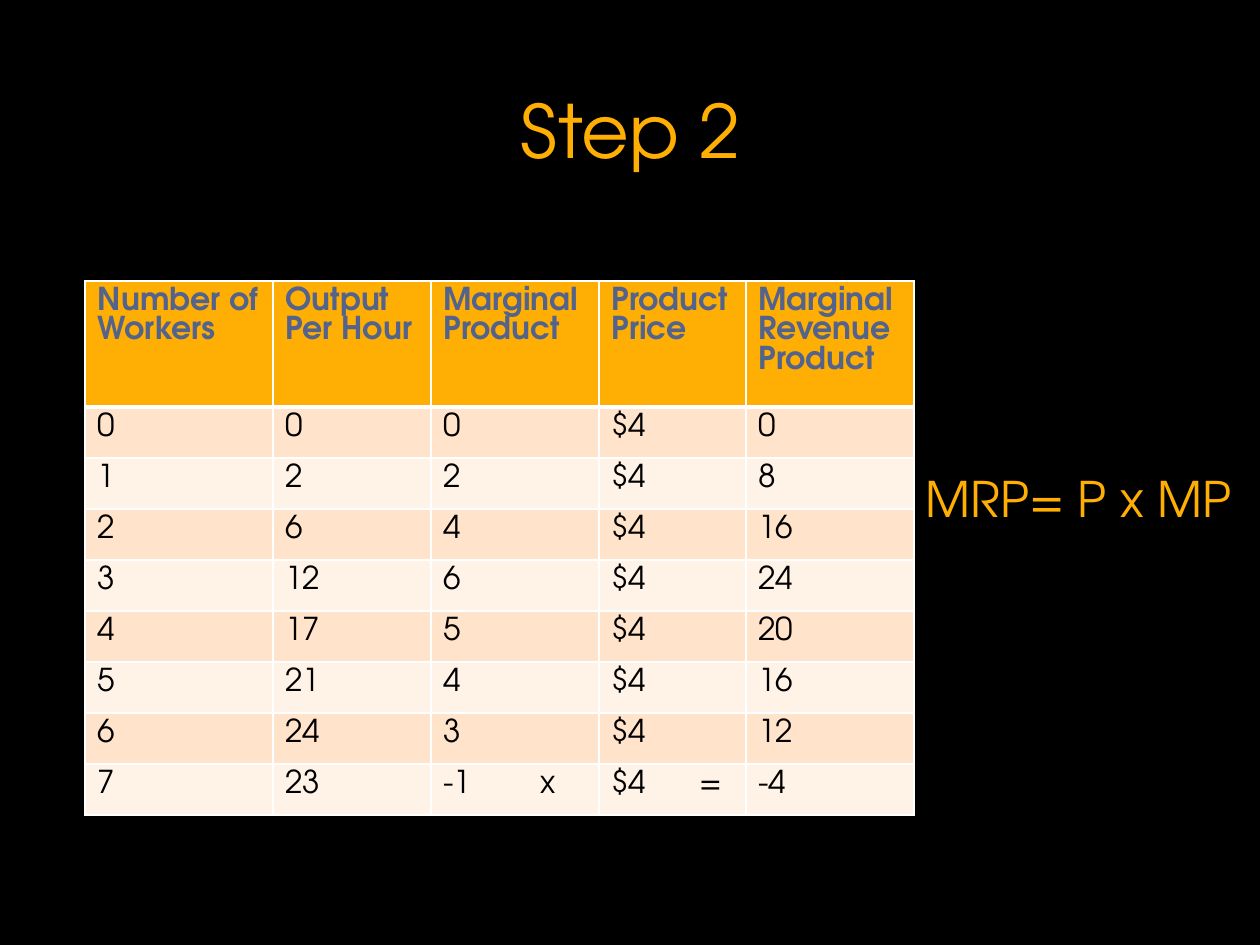
from dataclasses import dataclass
from lxml.etree import SubElement as Sub
from pptx import Presentation
from pptx.dml.color import RGBColor as RGB
from pptx.enum.text import MSO_ANCHOR as Anchor, PP_ALIGN as Align
from pptx.oxml.ns import qn
from pptx.util import Pt

PX = 914400 // 126


@dataclass(frozen=True)
class Theme:
    font: str = "TeX Gyre Adventor"
    back: str = "000000"
    gold: str = "FFAF03"
    slate: str = "54638C"
    ink: str = "000000"
    line: str = "FFFFFF"
    bands: tuple = ("FFE3CB", "FFF2E7")
    title: int = 42
    note: int = 28
    body: int = 18


T = Theme()
HEAD = ["Number of Workers", "Output Per Hour", "Marginal Product",
        "Product\nPrice", "Marginal Revenue Product"]
ROWS = [
    ["0", "0", "0", "$4", "0"],
    ["1", "2", "2", "$4", "8"],
    ["2", "6", "4", "$4", "16"],
    ["3", "12", "6", "$4", "24"],
    ["4", "17", "5", "$4", "20"],
    ["5", "21", "4", "$4", "16"],
    ["6", "24", "3", "$4", "12"],
    ["7", "23", "-1\tx", "$4\t=", "-4"],
]
COLS = [188, 158, 168, 147, 168]
TABS = {2: 97, 3: 88}
HEAD_H, ROW_H = 126, 51


def scale(box):
    return [n * PX for n in box]


def style(para, size, color, bold=False):
    font = para.font
    font.name, font.size, font.bold = T.font, Pt(size), bold
    font.color.rgb = RGB.from_string(color)


def label(slide, box, text, size, align, space=1.0):
    frame = slide.shapes.add_textbox(*scale(box)).text_frame
    frame.word_wrap = True
    frame.vertical_anchor = Anchor.MIDDLE
    frame.text = text
    para = frame.paragraphs[0]
    para.alignment = align
    para.line_spacing = space
    style(para, size, T.gold)


def edge(cell, side, width):
    line = Sub(cell._tc.get_or_add_tcPr(), qn("a:" + side), w=str(Pt(width)))
    fill = Sub(line, qn("a:solidFill"))
    Sub(fill, qn("a:srgbClr"), val=T.line)


def stop(para, pos):
    tabs = Sub(para._p.get_or_add_pPr(), qn("a:tabLst"))
    Sub(tabs, qn("a:tab"), pos=str(pos * PX), algn="l")


def paint(cell, text, row, col):
    head = row == 0
    for side in ("lnL", "lnR", "lnT", "lnB"):
        thick = (row, side) in ((0, "lnB"), (1, "lnT"))
        edge(cell, side, 3 if thick else 1)
    cell.fill.solid()
    fill = T.gold if head else T.bands[(row - 1) % 2]
    cell.fill.fore_color.rgb = RGB.from_string(fill)
    cell.text_frame.text = text
    for para in cell.text_frame.paragraphs:
        if "\t" in text:
            stop(para, TABS[col])
        style(para, T.body, T.slate if head else T.ink, head)


def grid(slide, left, top):
    data = [HEAD] + ROWS
    box = (left, top, sum(COLS), HEAD_H + ROW_H * len(ROWS))
    table = slide.shapes.add_table(len(data), len(COLS), *scale(box)).table
    for col, width in zip(table.columns, COLS):
        col.width = width * PX
    for r, texts in enumerate(data):
        table.rows[r].height = (ROW_H if r else HEAD_H) * PX
        for c, text in enumerate(texts):
            paint(table.cell(r, c), text, r, c)


def main():
    deck = Presentation()
    deck.slide_width, deck.slide_height = scale((1260, 945))
    slide = deck.slides.add_slide(deck.slide_layouts[6])
    back = slide.background.fill
    back.solid()
    back.fore_color.rgb = RGB.from_string(T.back)
    label(slide, (85, 81, 1091, 108), "Step 2", T.title, Align.CENTER, 0.9)
    grid(slide, 85, 281)
    label(slide, (913, 461, 346, 74), "MRP= P x MP", T.note, Align.LEFT)
    deck.save("out.pptx")


if __name__ == "__main__":
    main()
